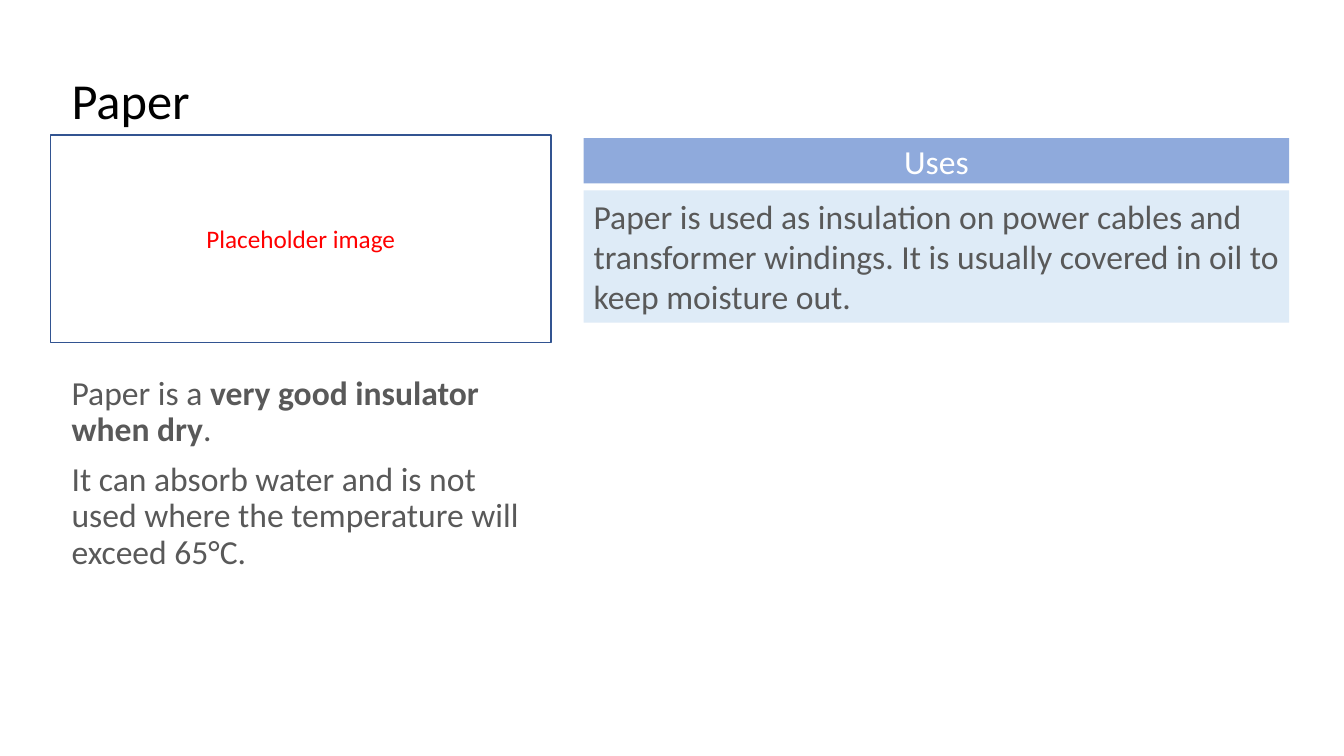
import pptx
import pptx.util
import pptx.dml.color
import pptx.enum.shapes
import pptx.enum.text
import lxml.etree

Cm = pptx.util.Cm
Pt = pptx.util.Pt
ALIGN = pptx.enum.text.PP_ALIGN
ANCHOR = pptx.enum.text.MSO_ANCHOR
GREY = "595959"


def color(value):
    return pptx.dml.color.RGBColor.from_string(value)


def add_span(para, text, size, ink, bold=False):
    span = para.add_run()
    span.text = text
    span.font.name = "Calibri"
    span.font.size = Pt(size)
    span.font.bold = bold
    span.font.color.rgb = color(ink)


deck = pptx.Presentation()
deck.slide_width = Cm(33.87)
deck.slide_height = Cm(19.05)
page = deck.slides.add_slide(deck.slide_layouts[1])

# Title and description
title = page.shapes.title
title.left, title.top, title.width, title.height = Cm(1.55), Cm(0.74), Cm(28.68), Cm(2.67)
title.text_frame.vertical_anchor = ANCHOR.BOTTOM
title.text_frame.auto_size = pptx.enum.text.MSO_AUTO_SIZE.NONE
heading = title.text_frame.paragraphs[0]
heading.alignment = ALIGN.LEFT
heading.line_spacing = 0.9
add_span(heading, "Paper", 36, "000000")

body = page.placeholders[1]
body.left, body.top, body.width, body.height = Cm(1.55), Cm(9.35), Cm(12.34), Cm(5.28)
body.text_frame.auto_size = pptx.enum.text.MSO_AUTO_SIZE.NONE
description = [
    [("Paper is a ", False), ("very good insulator when dry", True), (".", False)],
    [("It can absorb water and is not used where the temperature will exceed 65°C.", False)],
]
for index, pieces in enumerate(description):
    para = body.text_frame.add_paragraph() if index else body.text_frame.paragraphs[0]
    para.line_spacing = 0.9
    para.space_before = Pt(10)
    properties = para._p.get_or_add_pPr()
    properties.set("marL", "0")
    properties.set("indent", "0")
    lxml.etree.SubElement(properties, pptx.oxml.ns.qn("a:buNone"))
    for text, bold in pieces:
        add_span(para, text, 24, GREY, bold)

# Uses panel and image frame: position, fill, line, text, size, ink, alignment, anchor
boxes = [
    ((14.71, 3.48, 17.78, 1.14), "8FAADC", None, "Uses", 24, "FFFFFF", ALIGN.CENTER, ANCHOR.MIDDLE),
    ((14.71, 4.8, 17.78, 3.33), "DEEBF7", None,
     "Paper is used as insulation on power cables and transformer windings. "
     "It is usually covered in oil to keep moisture out.",
     24, GREY, ALIGN.LEFT, ANCHOR.TOP),
    ((1.27, 3.4, 12.62, 5.23), None, "325491", "Placeholder image", 18, "FF0000",
     ALIGN.CENTER, ANCHOR.MIDDLE),
]
for place, fill, line, text, size, ink, alignment, anchor in boxes:
    box = page.shapes.add_shape(pptx.enum.shapes.MSO_SHAPE.RECTANGLE, *map(Cm, place))
    box.shadow.inherit = False
    if fill:
        box.fill.solid()
        box.fill.fore_color.rgb = color(fill)
    else:
        box.fill.background()
    if line:
        box.line.color.rgb = color(line)
        box.line.width = Pt(1)
    else:
        box.line.fill.background()
    box.text_frame.word_wrap = True
    box.text_frame.vertical_anchor = anchor
    para = box.text_frame.paragraphs[0]
    para.alignment = alignment
    add_span(para, text, size, ink)

deck.save("out.pptx")
